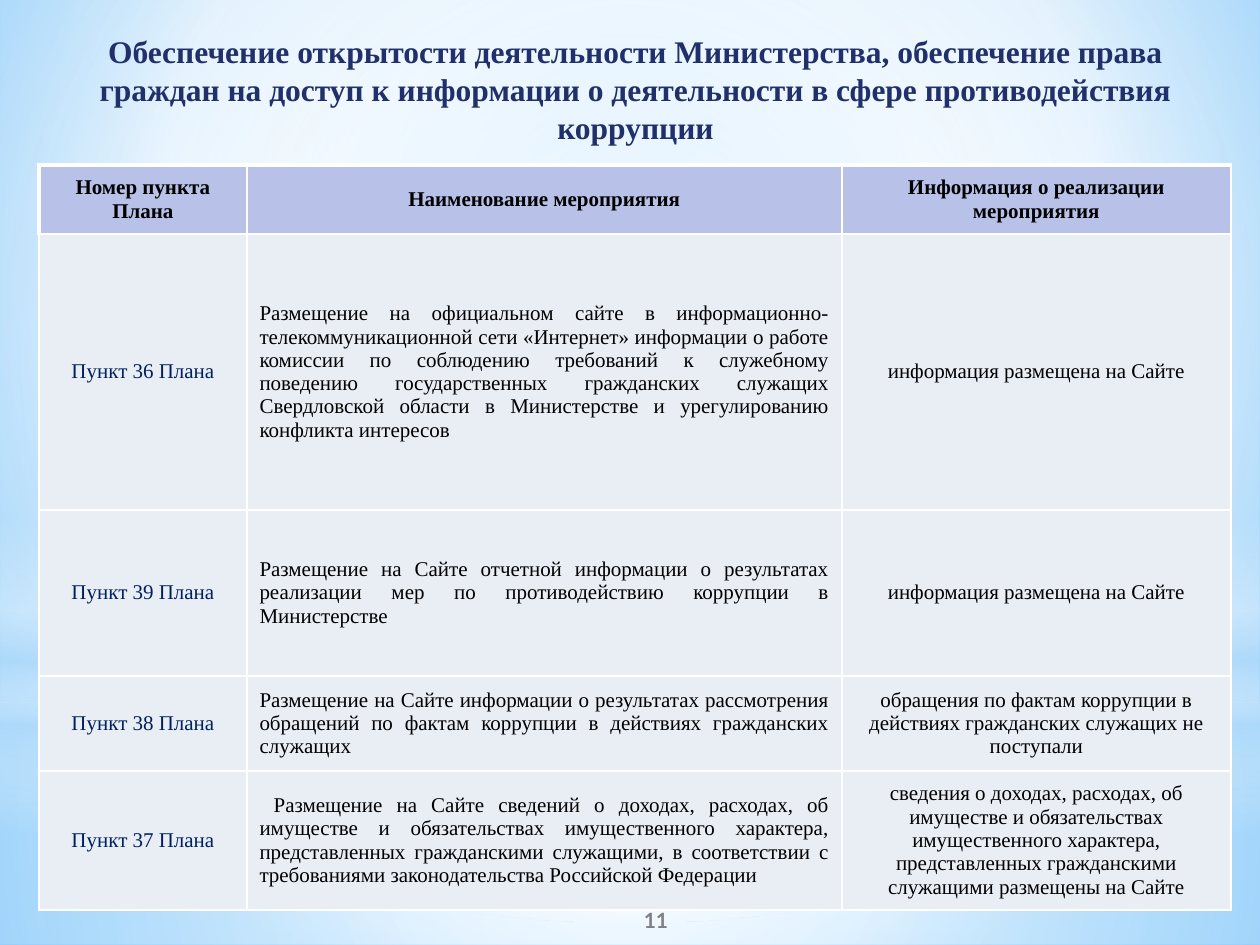
from lxml import etree
from pptx import Presentation
from pptx.dml.color import RGBColor
from pptx.enum.shapes import MSO_SHAPE
from pptx.enum.text import MSO_ANCHOR, MSO_AUTO_SIZE, PP_ALIGN
from pptx.oxml.ns import qn
from pptx.util import Pt

RECT, OVAL = MSO_SHAPE.RECTANGLE, MSO_SHAPE.OVAL
CENTER, JUSTIFY = PP_ALIGN.CENTER, PP_ALIGN.JUSTIFY
TOP, MIDDLE = MSO_ANCHOR.TOP, MSO_ANCHOR.MIDDLE
PX = 914400 // 126
SERIF = "Times New Roman"
COLORS = {
    "title": "21306A", "head": "B8C2E9", "body": "E9EDF4", "item": "002060",
    "text": "000000", "number": "808080", "white": "FFFFFF", "haze": "B4DCFA",
    "sky": "9ED5FF", "edge": "5BB9FF",
}


def set_gradient(fill, owner, stops, focus=None):
    """Stops are (position, colour, opacity); without a focus the run is downward."""
    fill.gradient()
    grad = owner.find(".//" + qn("a:gradFill"))
    for child in list(grad):
        grad.remove(child)
    gs_list = etree.SubElement(grad, qn("a:gsLst"))
    for pos, color, opacity in stops:
        gs = etree.SubElement(gs_list, qn("a:gs"), pos=str(pos * 1000))
        clr = etree.SubElement(gs, qn("a:srgbClr"), val=COLORS[color])
        if opacity < 100:
            etree.SubElement(clr, qn("a:alpha"), val=str(opacity * 1000))
    if focus:
        path = etree.SubElement(grad, qn("a:path"), {"path": "circle"})
        sides = {side: str(v * 1000) for side, v in zip("ltrb", focus)}
        etree.SubElement(path, qn("a:fillToRect"), sides)
    else:
        etree.SubElement(grad, qn("a:lin"), ang="5400000", scaled="0")


def set_text(tf, text, color, size, align=CENTER, bold=False, font=SERIF):
    p = tf.paragraphs[0]
    p.alignment = align
    r = p.add_run()
    r.text = text
    for name, value in {"name": font, "size": Pt(size), "bold": bold}.items():
        setattr(r.font, name, value)
    r.font.color.rgb = RGBColor.from_string(COLORS[color])


prs = Presentation()
prs.slide_width, prs.slide_height = 1260 * PX, 945 * PX
s = prs.slides.add_slide(prs.slide_layouts[5])

# Background
set_gradient(s.background.fill, s._element,
             [(0, "sky", 100), (60, "white", 100), (100, "edge", 100)],
             (20, 10, 20, 60))

# Soft light over the background
MID = (50, 50, 50, 50)
GLOWS = [
    (RECT, 703, 242, MID, [(0, "white", 91), (37, "white", 76), (100, "haze", 79)]),
    (RECT, 0, 703, MID, [(0, "white", 89), (48, "white", 62), (100, "haze", 79)]),
    (RECT, 519, 315, None, [(0, "white", 0), (29, "white", 30), (45, "haze", 40),
                            (55, "white", 26), (65, "haze", 60), (100, "white", 0)]),
    (OVAL, 220, 703, MID, [(0, "white", 100), (56, "white", 0)]),
]
for kind, top, height, focus, stops in GLOWS:
    sp = s.shapes.add_shape(kind, 0, top * PX, 1260 * PX, height * PX)
    sp.shadow.inherit = False
    sp.line.fill.background()
    set_gradient(sp.fill, sp._element, stops, focus)

# Title, brought in front of the light
title = s.shapes.title
s.shapes._spTree.append(title._element)
box = {"left": 35, "top": 26, "width": 1201, "height": 127}
for name, value in box.items():
    setattr(title, name, value * PX)
tf = title.text_frame
for name, value in {"word_wrap": True, "auto_size": MSO_AUTO_SIZE.NONE,
                    "vertical_anchor": TOP}.items():
    setattr(tf, name, value)
set_text(tf, "Обеспечение открытости деятельности Министерства, обеспечение права "
         "граждан на доступ к информации о деятельности в сфере противодействия "
         "коррупции", "title", 18, bold=True)

# Table of measures
ROWS = [
    ("Номер пункта Плана", "Наименование мероприятия",
     "Информация о реализации мероприятия"),
    ("Пункт 36 Плана",
     "Размещение на официальном сайте в информационно-телекоммуникационной сети "
     "«Интернет» информации о работе комиссии по соблюдению требований к служебному "
     "поведению государственных гражданских служащих Свердловской области в "
     "Министерстве и урегулированию конфликта интересов",
     "информация размещена на Сайте"),
    ("Пункт 39 Плана",
     "Размещение на Сайте отчетной информации о результатах реализации мер по "
     "противодействию коррупции в Министерстве",
     "информация размещена на Сайте"),
    ("Пункт 38 Плана",
     "Размещение на Сайте информации о результатах рассмотрения обращений по фактам "
     "коррупции в действиях гражданских служащих",
     "обращения по фактам коррупции в действиях гражданских служащих не поступали"),
    ("Пункт 37 Плана",
     " Размещение на Сайте сведений о доходах, расходах, об имуществе и "
     "обязательствах имущественного характера, представленных гражданскими "
     "служащими, в соответствии с требованиями законодательства Российской Федерации",
     "сведения о доходах, расходах, об имуществе и обязательствах имущественного "
     "характера, представленных гражданскими служащими размещены на Сайте"),
]
WIDTHS, HEIGHTS = [208, 595, 389], [69, 276, 166, 95, 139]
table = s.shapes.add_table(len(ROWS), len(WIDTHS), 39 * PX, 165 * PX,
                           sum(WIDTHS) * PX, sum(HEIGHTS) * PX).table
for col, width in zip(table.columns, WIDTHS):
    col.width = width * PX
for row, height in zip(table.rows, HEIGHTS):
    row.height = height * PX

for i, texts in enumerate(ROWS):
    for j, text in enumerate(texts):
        head = i == 0
        cell = table.cell(i, j)
        cell.vertical_anchor = MIDDLE
        borders = {"L": 3 if head and j == 0 else 1, "R": 1,
                   "T": 3 if head else 1, "B": 1}
        tc_pr = cell._tc.get_or_add_tcPr()
        for side, width in borders.items():
            ln = etree.SubElement(tc_pr, qn("a:ln" + side), w=str(Pt(width)))
            solid = etree.SubElement(ln, qn("a:solidFill"))
            etree.SubElement(solid, qn("a:srgbClr"), val=COLORS["white"])
        cell.fill.solid()
        cell.fill.fore_color.rgb = RGBColor.from_string(COLORS["head" if head else "body"])
        set_text(cell.text_frame, text, "item" if j == 0 and not head else "text", 12,
                 JUSTIFY if j == 1 and not head else CENTER, bold=head)

# Slide number
number = s.shapes.add_textbox(530 * PX, 895 * PX, 252 * PX, 50 * PX)
number.text_frame.word_wrap = True
number.text_frame.vertical_anchor = MIDDLE
set_text(number.text_frame, "11", "number", 12, bold=True, font="Lato")

prs.save("out.pptx")
